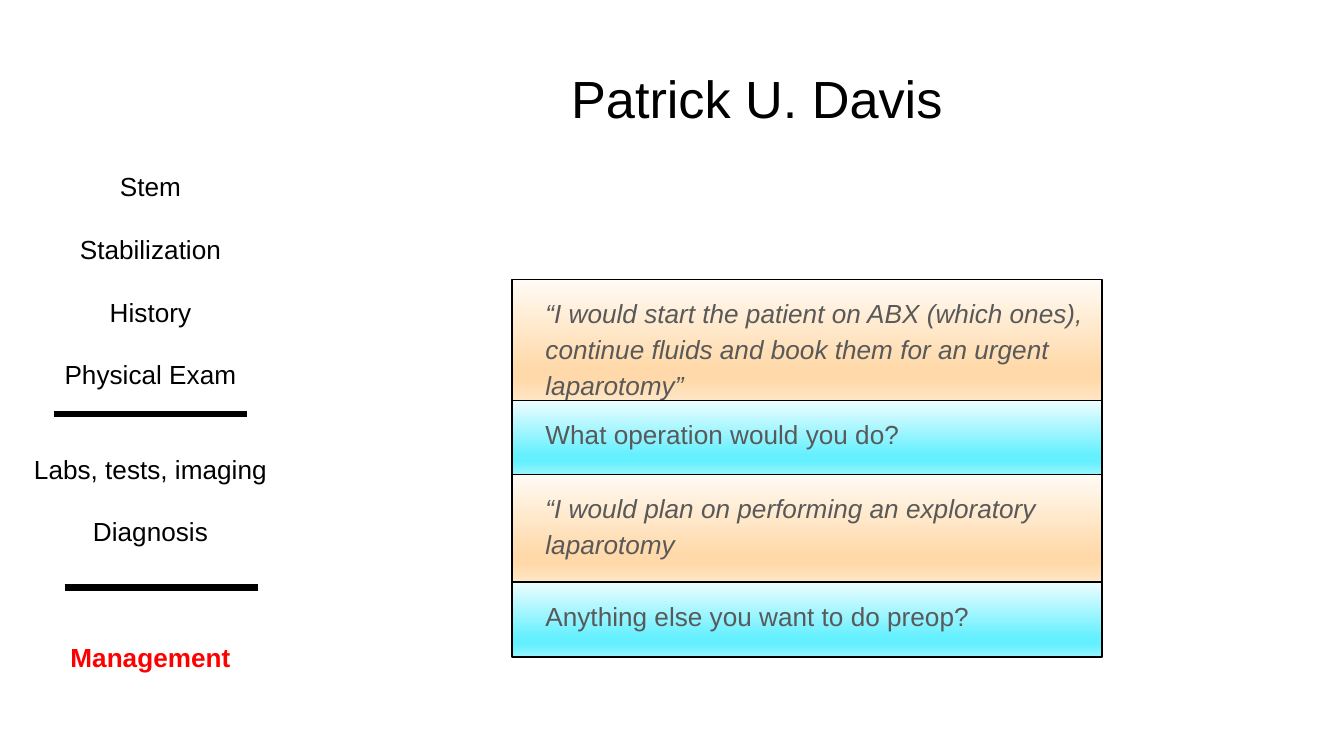
from dataclasses import dataclass

from lxml import etree
from pptx import Presentation
from pptx.dml.color import RGBColor
from pptx.enum.shapes import MSO_CONNECTOR, MSO_SHAPE
from pptx.enum.text import MSO_ANCHOR, MSO_AUTO_SIZE, PP_ALIGN
from pptx.oxml.ns import qn
from pptx.util import Inches, Pt

STRAIGHT = MSO_CONNECTOR.STRAIGHT
RECTANGLE = MSO_SHAPE.RECTANGLE
TOP = MSO_ANCHOR.TOP
LEFT, CENTER = PP_ALIGN.LEFT, PP_ALIGN.CENTER
NO_FIT, GROW = MSO_AUTO_SIZE.NONE, MSO_AUTO_SIZE.SHAPE_TO_FIT_TEXT


@dataclass(frozen=True)
class Theme:
    font: str = "Arial"
    title_size: float = 28
    body_size: float = 14
    line_height: float = 16.8
    ink: str = "000000"
    speech: str = "595959"
    current: str = "FF0000"
    # Gradient stops: percent and colour, from top to bottom
    answer: tuple = ((0, "FFFBF5"), (74, "FFD9A9"), (83, "FFD9A9"), (100, "FFE6C6"))
    question: tuple = ((0, "EEFDFF"), (74, "65F0FF"), (83, "65F0FF"), (100, "98F5FF"))


class SlideBuilder:
    def __init__(self, page, theme):
        self.page = page
        self.theme = theme

    def style(self, para, size, color, align=LEFT, bold=False, italic=False):
        para.alignment = align
        font = para.font
        font.name, font.size = self.theme.font, Pt(size)
        font.bold, font.italic = bold, italic
        font.color.rgb = RGBColor.from_string(color)

    def frame(self, shape):
        frame = shape.text_frame
        frame.word_wrap, frame.auto_size = True, NO_FIT
        frame.vertical_anchor = TOP
        frame.margin_left = frame.margin_right = Inches(0.1)
        frame.margin_top = frame.margin_bottom = Inches(0.1)
        return frame

    def title(self, text, left, top, width, height):
        box = self.page.shapes.title
        box.left, box.top = Inches(left), Inches(top)
        box.width, box.height = Inches(width), Inches(height)
        frame = self.frame(box)
        frame.text = text
        self.style(frame.paragraphs[0], self.theme.title_size, self.theme.ink)

    def outline(self, group, steps, current, left, top, width, height):
        """List the steps, each with the number of lines left free above it."""
        box = group.shapes.add_textbox(
            Inches(left), Inches(top), Inches(width), Inches(height))
        frame = box.text_frame
        frame.word_wrap, frame.auto_size = False, GROW
        for index, (text, free_lines) in enumerate(steps):
            para = frame.add_paragraph() if index else frame.paragraphs[0]
            para.text = text
            para.space_before = Pt(free_lines * self.theme.line_height)
            active = text == current
            color = self.theme.current if active else self.theme.ink
            self.style(para, self.theme.body_size, color, CENTER, bold=active)

    def rule(self, group, left, top, length):
        line = group.shapes.add_connector(
            STRAIGHT, Inches(left), Inches(top), Inches(left + length), Inches(top))
        line.line.color.rgb = RGBColor.from_string(self.theme.ink)
        line.line.width = Pt(3.5)
        etree.SubElement(line._element.spPr, qn("a:effectLst"))

    def gradient(self, shape, stops):
        shape.fill.gradient()
        shape.fill.gradient_angle = 270
        stop_list = shape._element.spPr.find(".//" + qn("a:gsLst"))
        for old in list(stop_list):
            stop_list.remove(old)
        for percent, color in stops:
            stop = etree.SubElement(stop_list, qn("a:gs"), pos=str(percent * 1000))
            etree.SubElement(stop, qn("a:srgbClr"), val=color)

    def dialogue(self, text, stops, italic, left, top, width, height):
        box = self.page.shapes.add_shape(
            RECTANGLE, Inches(left), Inches(top), Inches(width), Inches(height))
        box.shadow.inherit = False
        self.gradient(box, stops)
        box.line.color.rgb = RGBColor.from_string(self.theme.ink)
        box.line.width = Pt(0.75)
        frame = self.frame(box)
        frame.text = text
        para = frame.paragraphs[0]
        self.style(para, self.theme.body_size, self.theme.speech, italic=italic)
        para.line_spacing = 1.15
        # Indent the whole paragraph
        properties = para._p.get_or_add_pPr()
        properties.set("marL", str(Inches(0.15)))
        properties.set("indent", "0")


STEPS = [
    ("Stem", 0), ("Stabilization", 1), ("History", 1), ("Physical Exam", 1),
    ("Labs, tests, imaging", 2), ("Diagnosis", 1), ("Management", 3),
]

# Text, whether it is the candidate's answer, box height
DIALOGUE = [
    ("“I would start the patient on ABX (which ones), continue fluids "
     "and book them for an urgent laparotomy”", True, 0.9),
    ("What operation would you do?", False, 0.55),
    ("“I would plan on performing an exploratory laparotomy", True, 0.8),
    ("Anything else you want to do preop?", False, 0.56),
]


def main():
    # Widescreen page, 16 to 9
    deck = Presentation()
    deck.slide_width = Inches(10)
    deck.slide_height = Inches(10 * 9 / 16)
    theme = Theme()
    page = deck.slides.add_slide(deck.slide_layouts[5])
    builder = SlideBuilder(page, theme)

    builder.title("Patrick U. Davis", 4.15, 0.39, 6.35, 0.63)

    # Case outline with rules between its phases
    sidebar = page.shapes.add_group_shape()
    builder.outline(sidebar, STEPS, "Management", 0.15, 1.22, 1.94, 3.87)
    for left, top in ((0.4, 3.08), (0.48, 4.37)):
        builder.rule(sidebar, left, top, 1.44)

    # Stacked answers and questions
    top = 2.08
    for text, is_answer, height in DIALOGUE:
        stops = theme.answer if is_answer else theme.question
        builder.dialogue(text, stops, is_answer, 3.81, top, 4.39, height)
        top += height

    deck.save("out.pptx")


if __name__ == "__main__":
    main()
